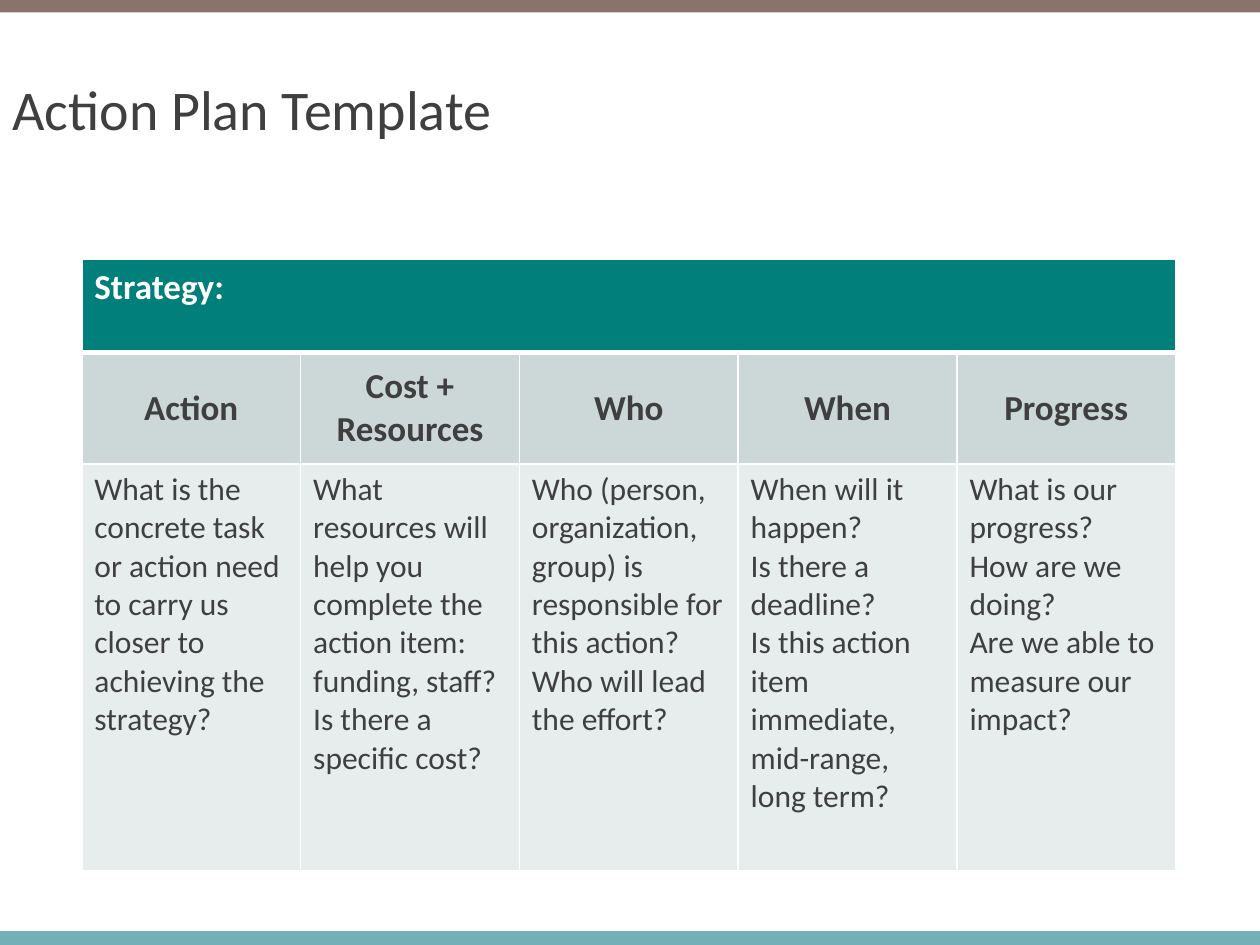
from lxml.etree import SubElement
from pptx import Presentation
from pptx.dml.color import RGBColor
from pptx.enum.shapes import MSO_SHAPE
from pptx.enum.text import MSO_ANCHOR as Anchor, PP_ALIGN as Align
from pptx.oxml.ns import qn
from pptx.util import Cm, Pt

TITLE = "Action Plan Template"
STRATEGY = "Strategy:"
COLUMNS = [
    ("Action", ["What is the concrete task or action need to carry us closer to "
                "achieving the strategy?"]),
    ("Cost + Resources", ["What resources will help you complete the action item: "
                          "funding, staff?",
                          "Is there a specific cost?"]),
    ("Who", ["Who (person, organization, group) is responsible for this action?",
             "Who will lead the effort?"]),
    ("When", ["When will it happen?",
              "Is there a deadline?",
              "Is this action item immediate, mid-range, long term?"]),
    ("Progress", ["What is our progress?",
                  "How are we doing?",
                  "Are we able to measure our impact?"]),
]

FONT = "Calibri"
INK, WHITE = "3F3F3F", "FFFFFF"
TEAL, HEADING_FILL, BODY_FILL = "007F7B", "CCD8D7", "E7ECEC"
WIDTH, HEIGHT = 25.4, 19.05
BARS = [(0, 0.25, "88746A"), (18.77, 0.28, "73AFB6")]  # top, height, colour
TABLE_LEFT, TABLE_TOP, COLUMN_WIDTH = 1.65, 5.23, 4.41
ROW_HEIGHTS = [1.88, 2.24, 8.2]
THIN, THICK = 1, 3


def rgb(hex_colour):
    return RGBColor.from_string(hex_colour)


def write(frame, lines, size, colour=INK, bold=False, align=Align.LEFT):
    frame.text = "\n".join(lines)
    for paragraph in frame.paragraphs:
        paragraph.alignment = align
        font = paragraph.font
        font.name, font.size, font.bold = FONT, Pt(size), bold
        font.color.rgb = rgb(colour)


def style_cell(cell, fill, top=THIN, bottom=THIN):
    """Give the cell white borders (widths in points) and a solid fill."""
    properties = cell._tc.get_or_add_tcPr()
    for side, width in (("L", THIN), ("R", THIN), ("T", top), ("B", bottom)):
        line = SubElement(properties, qn(f"a:ln{side}"), w=str(Pt(width)))
        SubElement(SubElement(line, qn("a:solidFill")), qn("a:srgbClr"), val=WHITE)
    cell.fill.solid()
    cell.fill.fore_color.rgb = rgb(fill)


def add_bar(slide, top, height, colour):
    bar = slide.shapes.add_shape(
        MSO_SHAPE.RECTANGLE, 0, Cm(top), Cm(WIDTH), Cm(height))
    bar.shadow.inherit = False
    bar.fill.solid()
    bar.fill.fore_color.rgb = rgb(colour)
    bar.line.fill.background()


def add_title(slide):
    frame = slide.shapes.add_textbox(0, Cm(0.48), Cm(WIDTH), Cm(3.38)).text_frame
    frame.word_wrap = True
    frame.vertical_anchor = Anchor.MIDDLE
    write(frame, [TITLE], 32)


def add_plan(slide):
    table = slide.shapes.add_table(
        len(ROW_HEIGHTS), len(COLUMNS), Cm(TABLE_LEFT), Cm(TABLE_TOP),
        Cm(COLUMN_WIDTH * len(COLUMNS)), Cm(sum(ROW_HEIGHTS))).table
    for row, height in zip(table.rows, ROW_HEIGHTS):
        row.height = Cm(height)
    for i, (heading, questions) in enumerate(COLUMNS):
        table.columns[i].width = Cm(COLUMN_WIDTH)
        strategy_cell, heading_cell, body_cell = (
            table.cell(row, i) for row in range(len(ROW_HEIGHTS)))
        style_cell(strategy_cell, TEAL, bottom=THICK)
        style_cell(heading_cell, HEADING_FILL, top=THICK)
        style_cell(body_cell, BODY_FILL)
        heading_cell.vertical_anchor = Anchor.MIDDLE
        write(heading_cell.text_frame, [heading], 20, bold=True, align=Align.CENTER)
        write(body_cell.text_frame, questions, 18)
    strategy = table.cell(0, 0)
    strategy.merge(table.cell(0, len(COLUMNS) - 1))
    write(strategy.text_frame, [STRATEGY], 20, WHITE, bold=True)


def main():
    deck = Presentation()
    deck.slide_width, deck.slide_height = Cm(WIDTH), Cm(HEIGHT)
    slide = deck.slides.add_slide(deck.slide_layouts[6])
    for bar in BARS:
        add_bar(slide, *bar)
    add_title(slide)
    add_plan(slide)
    deck.save("out.pptx")


if __name__ == "__main__":
    main()
